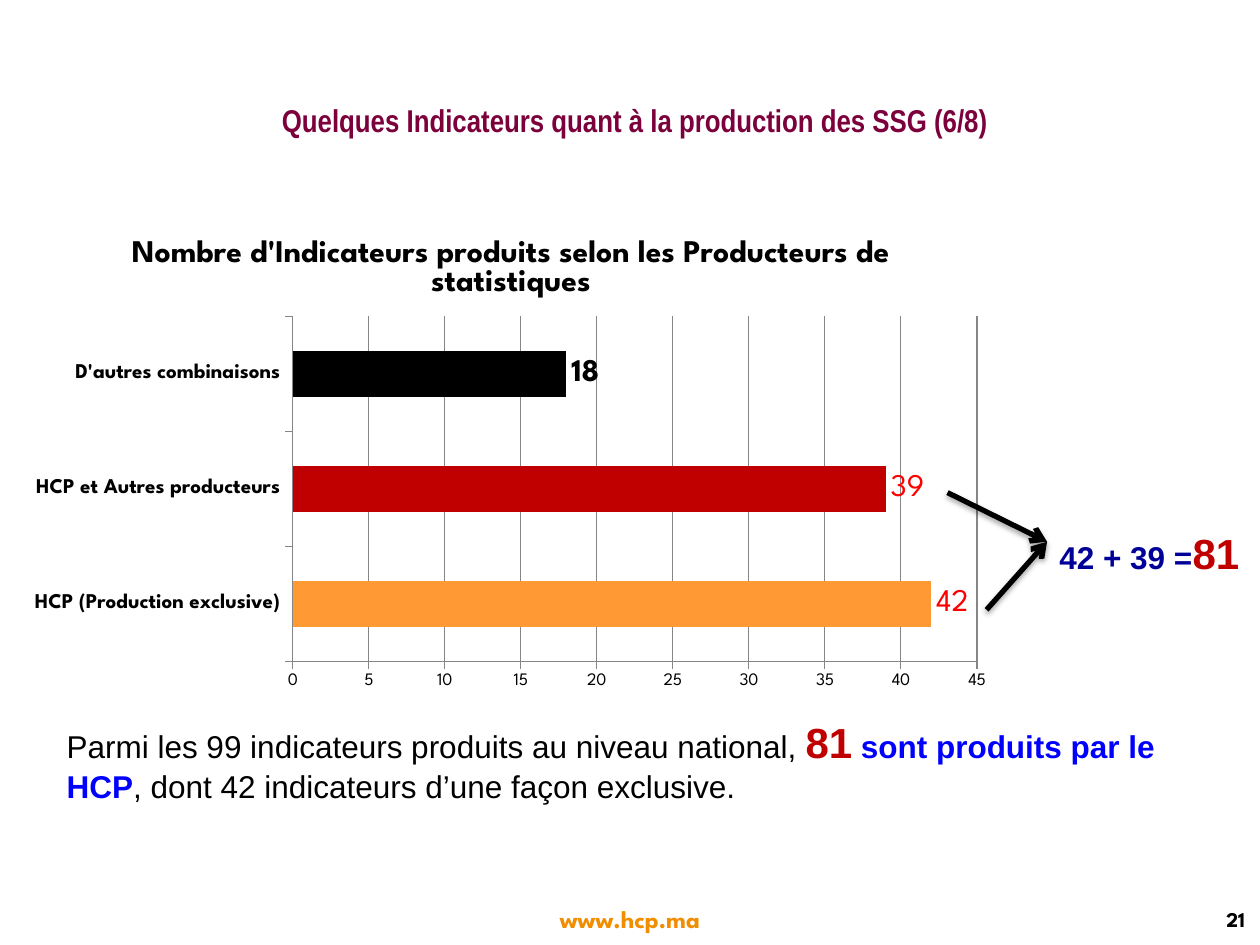
import pptx
import pptx.util
import pptx.dml.color
import pptx.chart.data
import pptx.enum.chart
import pptx.enum.shapes
import pptx.enum.text
import pptx.oxml

Pt = pptx.util.Pt
RGBColor = pptx.dml.color.RGBColor
Align = pptx.enum.text.PP_ALIGN
Anchor = pptx.enum.text.MSO_ANCHOR

BLACK = RGBColor(0x00, 0x00, 0x00)
GRAY = RGBColor(0x86, 0x86, 0x86)
PLUM = RGBColor(0x7B, 0x00, 0x3B)
AMBER = RGBColor(0xF1, 0x8E, 0x00)
ORANGE = RGBColor(0xFF, 0x99, 0x33)
CRIMSON = RGBColor(0xC0, 0x00, 0x00)
RED = RGBColor(0xFF, 0x00, 0x00)
NAVY = RGBColor(0x00, 0x00, 0x99)
BLUE = RGBColor(0x00, 0x00, 0xFF)

WIDTH, HEIGHT = pptx.util.Inches(10), pptx.util.Inches(7.5)
SPARTAN = "League Spartan"
DRAWING_NS = "http://schemas.openxmlformats.org/drawingml/2006/main"
CHART_NS = "http://schemas.openxmlformats.org/drawingml/2006/chart"


def place(x, y):
    return int(WIDTH * x / 100), int(HEIGHT * y / 100)


def set_font(font, size, color, bold=False, name=SPARTAN):
    font.name = name
    font.size = Pt(size)
    font.bold = bold
    font.color.rgb = color


def add_text(s, x, y, w, h, runs, name, align=Align.LEFT,
             anchor=Anchor.TOP, wrap=True):
    sp = s.shapes.add_textbox(*place(x, y), *place(w, h))
    tf = sp.text_frame
    tf.word_wrap = wrap
    tf.vertical_anchor = anchor
    p = tf.paragraphs[0]
    p.alignment = align
    for text, size, color, bold in runs:
        r = p.add_run()
        r.text = text
        set_font(r.font, size, color, bold, name)


def add_arrow(s, start, end):
    sp = s.shapes.add_connector(
        pptx.enum.shapes.MSO_CONNECTOR.STRAIGHT, *place(*start), *place(*end))
    sp.line.color.rgb = BLACK
    sp.line.width = Pt(3)
    sp.line._get_or_add_ln().append(pptx.oxml.parse_xml(
        f'<a:tailEnd xmlns:a="{DRAWING_NS}" type="arrow"/>'))
    sp._element.spPr.append(pptx.oxml.parse_xml(
        f'<a:effectLst xmlns:a="{DRAWING_NS}">'
        f'<a:outerShdw blurRad="{Pt(3.1)}" dist="{Pt(1.8)}" dir="5400000" '
        'rotWithShape="0"><a:srgbClr val="000000"><a:alpha val="35000"/>'
        '</a:srgbClr></a:outerShdw></a:effectLst>'))


def set_plot_layout(chart, x, y, w, h):
    area = chart._chartSpace.chart.plotArea
    for layout in area.findall(f"{{{CHART_NS}}}layout"):
        area.remove(layout)
    area.insert(0, pptx.oxml.parse_xml(
        f'<c:layout xmlns:c="{CHART_NS}"><c:manualLayout>'
        '<c:layoutTarget val="inner"/><c:xMode val="edge"/>'
        f'<c:yMode val="edge"/><c:x val="{x}"/><c:y val="{y}"/>'
        f'<c:w val="{w}"/><c:h val="{h}"/></c:manualLayout></c:layout>'))


def style_axis(axis, size, bold):
    axis.major_tick_mark = pptx.enum.chart.XL_TICK_MARK.OUTSIDE
    axis.format.line.color.rgb = GRAY
    set_font(axis.tick_labels.font, size, BLACK, bold)


def add_producer_chart(s, x, y, w, h):
    data = pptx.chart.data.CategoryChartData()
    data.categories = ["HCP (Production exclusive)",
                       "HCP et Autres producteurs", "D'autres combinaisons"]
    data.add_series("Series 1", (42, 39, 18))
    chart = s.shapes.add_chart(
        pptx.enum.chart.XL_CHART_TYPE.BAR_CLUSTERED,
        *place(x, y), *place(w, h), data).chart
    set_font(chart.font, 10, BLACK)
    chart.has_legend = False
    chart.has_title = True
    tf = chart.chart_title.text_frame
    tf.text = "Nombre d'Indicateurs produits selon les Producteurs de statistiques"
    set_font(tf.paragraphs[0].runs[0].font, 18, BLACK, True)
    chart.chart_title.include_in_layout = False
    set_plot_layout(chart, 0.28, 0.21, 0.69, 0.71)

    style_axis(chart.category_axis, 12, True)
    values = chart.value_axis
    style_axis(values, 10, False)
    values.minimum_scale, values.maximum_scale, values.major_unit = 0, 45, 5
    values.major_gridlines.format.line.color.rgb = GRAY

    plot = chart.plots[0]
    plot.gap_width = 150
    plot.vary_by_categories = False
    series = plot.series[0]
    outside = pptx.enum.chart.XL_LABEL_POSITION.OUTSIDE_END
    labels = series.data_labels
    labels.show_value = True
    labels.position = outside
    set_font(labels.font, 18, BLACK, True)
    for i, color in enumerate((ORANGE, CRIMSON, BLACK)):
        fill = series.points[i].format.fill
        fill.solid()
        fill.fore_color.rgb = color
    for i in range(2):
        label = series.points[i].data_label
        set_font(label.font, 18, RED)
        label.position = outside


def main():
    prs = pptx.Presentation()
    prs.slide_width, prs.slide_height = WIDTH, HEIGHT
    s = prs.slides.add_slide(prs.slide_layouts[6])

    add_text(s, 38.2, 94.93, 23.6, 4.67, [("www.hcp.ma", 14, AMBER, True)],
             SPARTAN, Align.CENTER, Anchor.MIDDLE)
    add_text(s, 12.2, 10.13, 76.4, 5.2,
             [("Quelques Indicateurs quant à la production des SSG (6/8)",
               18, PLUM, True)],
             "Arial Narrow", Align.CENTER, Anchor.MIDDLE)
    add_text(s, 84.6, 94.93, 15.2, 4.67, [("21", 12, BLACK, True)],
             SPARTAN, Align.RIGHT, Anchor.MIDDLE)

    add_producer_chart(s, 1.2, 22.67, 78.7, 51.47)

    total = (83.1, 57.33)
    for start in ((75.2, 52.13), (78.3, 64.53)):
        add_arrow(s, start, total)
    add_text(s, 83.1, 55.2, 16.4, 6.67,
             [("42 + 39 =", 18, NAVY, True), ("81", 24, CRIMSON, True)],
             "Arial", wrap=False)
    add_text(s, 4.3, 75.2, 92.1, 14.8,
             [("Parmi les 99 indicateurs produits au niveau national, ",
               18, BLACK, False),
              ("81", 24, CRIMSON, True),
              (" ", 18, BLACK, False),
              ("sont produits par le HCP", 18, BLUE, True),
              (", dont 42 indicateurs d’une façon exclusive.",
               18, BLACK, False)],
             "Arial")

    prs.save("out.pptx")


if __name__ == "__main__":
    main()
